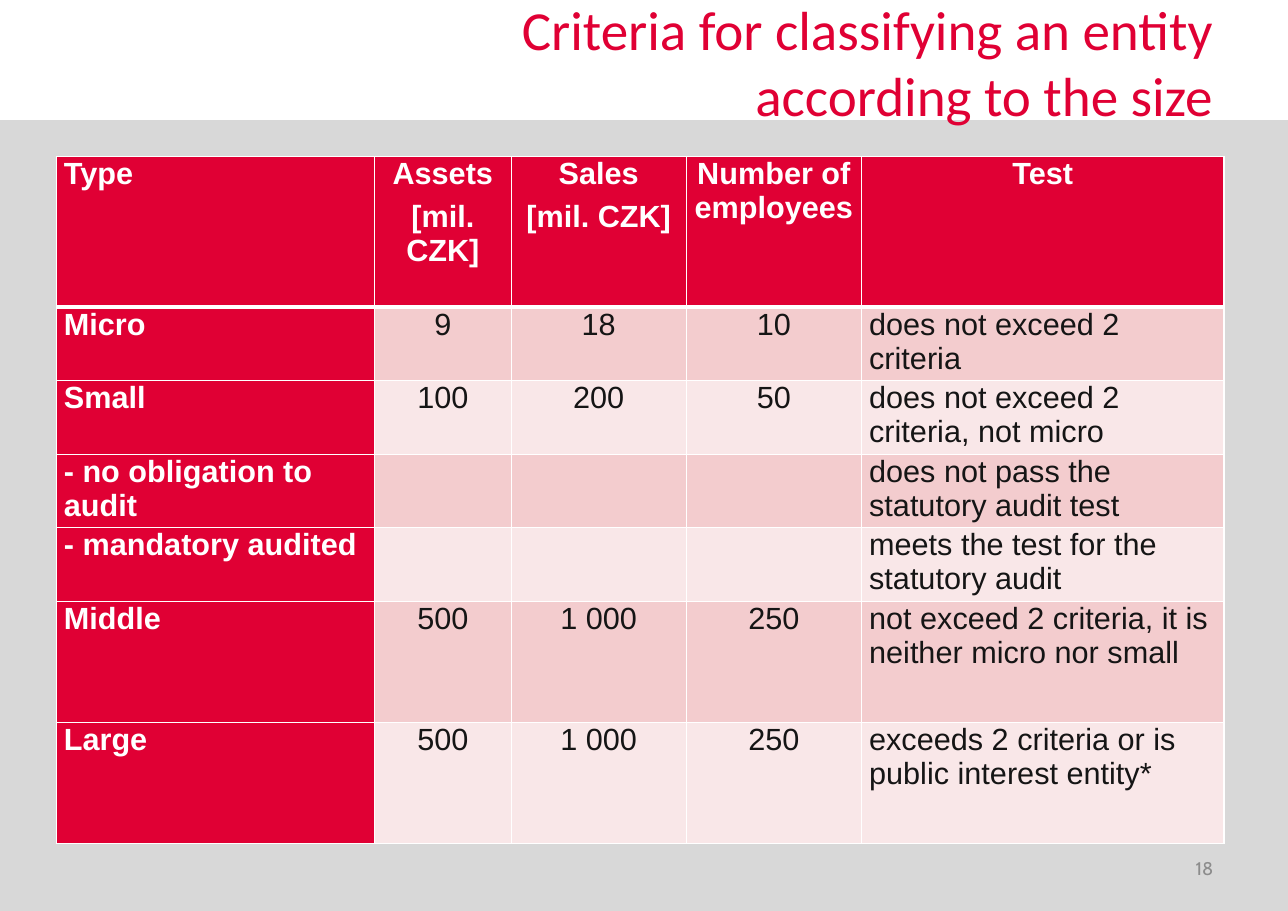
from dataclasses import dataclass

from lxml.etree import SubElement
from pptx import Presentation
from pptx.dml.color import RGBColor as Rgb
from pptx.enum.shapes import MSO_SHAPE as Shape
from pptx.enum.text import MSO_ANCHOR as Anchor, MSO_AUTO_SIZE as AutoSize, PP_ALIGN as Align
from pptx.oxml.ns import qn
from pptx.slide import Slide
from pptx.table import _Cell as Cell
from pptx.text.text import TextFrame
from pptx.util import Inches, Pt


@dataclass(frozen=True)
class Theme:
    """Colours, fonts and type sizes of the slide."""
    red: str = "E00034"
    white: str = "FFFFFF"
    ink: str = "151515"
    grey: str = "D8D8D8"
    number_grey: str = "8C8C8C"
    odd_band: str = "F3CCCE"
    even_band: str = "F9E7E8"
    title_font: str = "Calibri"
    table_font: str = "Arial"
    number_font: str = "Cabin"
    title_size: int = 36
    table_size: int = 20
    number_size: int = 12
    paragraph_gap: int = 6
    thin: int = 1
    thick: int = 3


@dataclass(frozen=True)
class TextStyle:
    """The look of one kind of text."""
    font: str
    size: int
    color: str
    align: Align
    bold: bool = False


@dataclass(frozen=True)
class Column:
    """A table column with its heading and alignments."""
    heading: str
    width: float
    heading_align: Align
    body_align: Align


@dataclass(frozen=True)
class EntityRow:
    """One entity type with its limits and test."""
    kind: str
    assets: str
    sales: str
    employees: str
    test: str
    height: float = 0.55


THEME = Theme()
COLUMNS = (
    Column("Type", 2.89, Align.JUSTIFY, Align.LEFT),
    Column("Assets\n[mil. CZK]", 1.24, Align.CENTER, Align.CENTER),
    Column("Sales\n[mil. CZK]", 1.59, Align.CENTER, Align.CENTER),
    Column("Number of employees", 1.59, Align.CENTER, Align.CENTER),
    Column("Test", 3.29, Align.CENTER, Align.LEFT),
)
HEADER_HEIGHT = 1.37
ENTITIES = (
    EntityRow("Micro", "9", "18", "10", "does not exceed 2 criteria"),
    EntityRow("Small", "100", "200", "50", "does not exceed 2 criteria, not micro"),
    EntityRow("- no obligation to audit", "", "", "", "does not pass the statutory audit test"),
    EntityRow("- mandatory audited", "", "", "", "meets the test for the statutory audit"),
    EntityRow("Middle", "500", "1 000", "250",
              "not exceed 2 criteria, it is neither micro nor small", 1.1),
    EntityRow("Large", "500", "1 000", "250",
              "exceeds 2 criteria or is public interest entity*", 1.1),
)


def write(frame: TextFrame, text: str, style: TextStyle) -> None:
    """Fill a text frame and format its paragraphs."""
    frame.text = text
    for index, para in enumerate(frame.paragraphs):
        para.alignment = style.align
        if index:
            para.space_before = Pt(THEME.paragraph_gap)
        font = para.font
        font.name, font.size, font.bold = style.font, Pt(style.size), style.bold
        font.color.rgb = Rgb.from_string(style.color)
        for span in para.runs:
            span.font.name, span.font.size, span.font.bold = style.font, Pt(style.size), style.bold
            span.font.color.rgb = Rgb.from_string(style.color)


def draw_borders(cell: Cell, top: int, bottom: int) -> None:
    """Give a cell white borders on all four sides."""
    properties = cell._tc.get_or_add_tcPr()
    widths = {"a:lnL": THEME.thin, "a:lnR": THEME.thin, "a:lnT": top, "a:lnB": bottom}
    for tag, width in widths.items():
        line = SubElement(properties, qn(tag), w=str(Pt(width)))
        fill = SubElement(line, qn("a:solidFill"))
        SubElement(fill, qn("a:srgbClr"), val=THEME.white)


def draw_cell(cell: Cell, text: str, row: int, column: int) -> None:
    """Write and colour one table cell."""
    heading = row == 0
    strong = heading or column == 0
    layout = COLUMNS[column]
    align = layout.heading_align if heading else layout.body_align
    color = THEME.white if strong else THEME.ink
    band = THEME.odd_band if row % 2 else THEME.even_band
    cell.margin_left = cell.margin_right = Inches(0.07)
    cell.margin_top = cell.margin_bottom = 0
    draw_borders(cell, THEME.thick if row == 1 else THEME.thin,
                 THEME.thick if heading else THEME.thin)
    cell.fill.solid()
    cell.fill.fore_color.rgb = Rgb.from_string(THEME.red if strong else band)
    write(cell.text_frame, text,
          TextStyle(THEME.table_font, THEME.table_size, color, align, strong))


def draw_table(slide: Slide) -> None:
    """Draw the table of size criteria."""
    lines = [[column.heading for column in COLUMNS]]
    lines += [[item.kind, item.assets, item.sales, item.employees, item.test]
              for item in ENTITIES]
    heights = [HEADER_HEIGHT] + [item.height for item in ENTITIES]
    width = sum(column.width for column in COLUMNS)
    table = slide.shapes.add_table(len(lines), len(COLUMNS), Inches(0.51), Inches(1.42),
                                   Inches(width), Inches(sum(heights))).table
    for table_column, column in zip(table.columns, COLUMNS):
        table_column.width = Inches(column.width)
    for row, (texts, height) in enumerate(zip(lines, heights)):
        table.rows[row].height = Inches(height)
        for column, text in enumerate(texts):
            draw_cell(table.cell(row, column), text, row, column)


def draw_title(slide: Slide) -> None:
    """Place the title over the grey page panel."""
    title = slide.shapes.title
    title.left, title.top = Inches(2.99), Inches(0.2)
    title.width, title.height = Inches(8.12), Inches(0.72)
    frame = title.text_frame
    frame.word_wrap, frame.auto_size = True, AutoSize.NONE
    frame.vertical_anchor = Anchor.MIDDLE
    write(frame, "Criteria for classifying an entity according to the size",
          TextStyle(THEME.title_font, THEME.title_size, THEME.red, Align.RIGHT))
    panel = slide.shapes.add_shape(Shape.RECTANGLE, 0, Inches(1.09), Inches(11.69), Inches(7.18))
    panel.shadow.inherit = False
    panel.fill.solid()
    panel.fill.fore_color.rgb = Rgb.from_string(THEME.grey)
    panel.line.fill.background()
    title.element.addprevious(panel.element)


def draw_page_number(slide: Slide) -> None:
    """Write the page number at the bottom right."""
    box = slide.shapes.add_textbox(Inches(8.38), Inches(7.66), Inches(2.73), Inches(0.44))
    box.text_frame.word_wrap = True
    box.text_frame.vertical_anchor = Anchor.MIDDLE
    write(box.text_frame, "18",
          TextStyle(THEME.number_font, THEME.number_size, THEME.number_grey, Align.RIGHT))


def main() -> None:
    """Build and save the deck."""
    deck = Presentation()
    deck.slide_width, deck.slide_height = Inches(11.69), Inches(8.27)
    page = deck.slides.add_slide(deck.slide_layouts.get_by_name("Title Only"))
    draw_title(page)
    draw_page_number(page)
    draw_table(page)
    deck.save("out.pptx")


if __name__ == "__main__":
    main()
